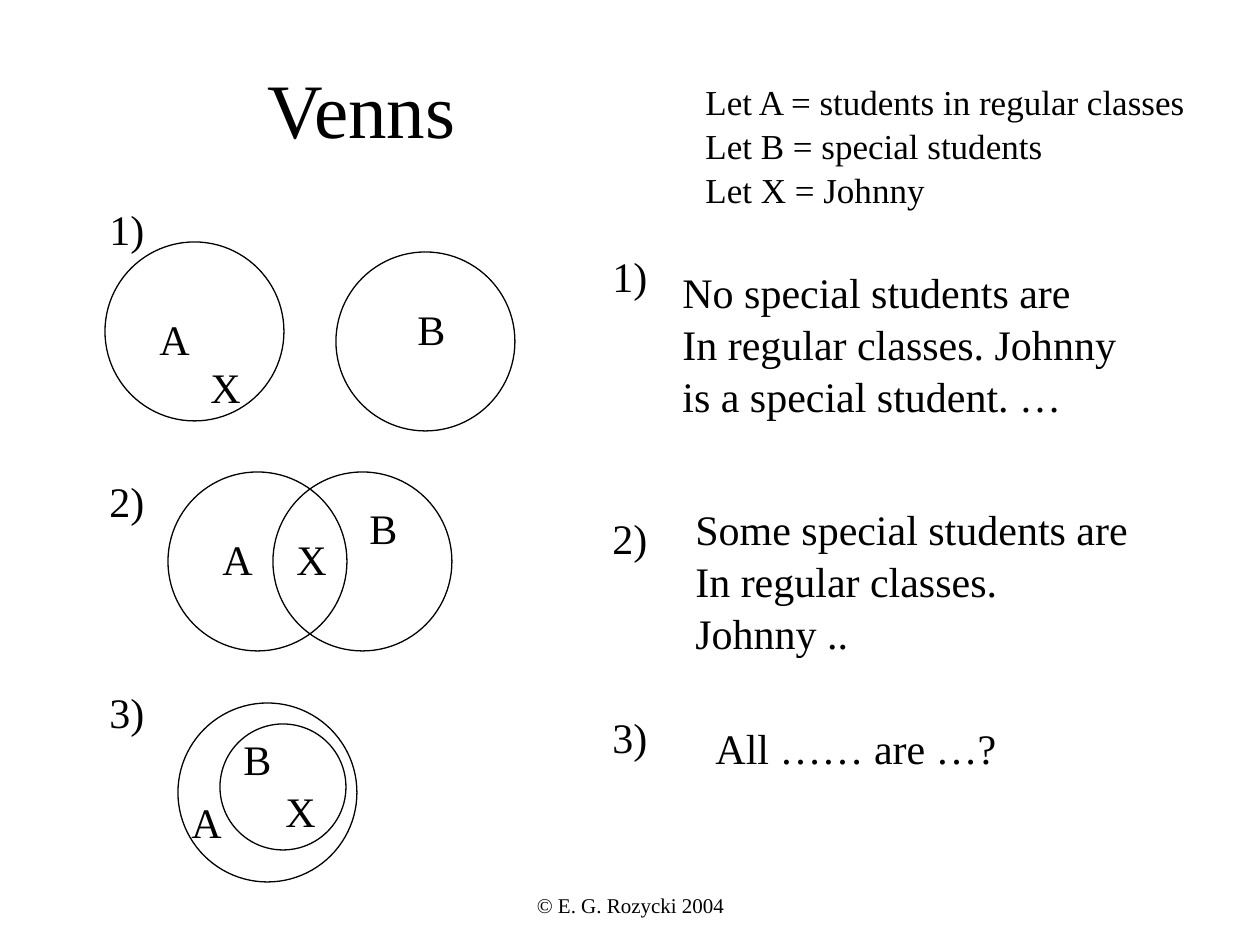
from pptx import Presentation
from pptx.dml.color import RGBColor
from pptx.enum.shapes import MSO_SHAPE
from pptx.enum.text import MSO_ANCHOR, MSO_AUTO_SIZE, PP_ALIGN
from pptx.util import Pt

PX = 914400 / 126
INK = "000000"
FONT = "Times New Roman"
LINE_SPACING = 1.04

CIRCLES = [
    (336, 252, 179), (105, 242, 179),
    (273, 472, 179), (168, 472, 179),
    (220, 724, 126), (178, 703, 179),
]
TITLE = ("Venns", (136, 53, 451, 105), 44, MSO_ANCHOR.MIDDLE)
FOOTER = ("© E. G. Rozycki 2004", (431, 861, 399, 63), 12, MSO_ANCHOR.BOTTOM)
LABELS = {
    "A": [(147, 305), (210, 525), (179, 788)],
    "B": [(405, 295), (357, 494), (231, 725)],
    "X": [(198, 353), (284, 525), (273, 777)],
    "1)": [(97, 195), (600, 242)],
    "2)": [(97, 467), (600, 504)],
    "3)": [(97, 678), (600, 703)],
}
STATEMENTS = [
    (["Let A = students in regular classes", "Let B = special students",
      "Let X = Johnny"], (693, 73, 508, 139), 20),
    (["No special students are",
      "In regular classes. Johnny\nis a special student. …"], (670, 258, 459, 164), 24),
    (["Some special students are", "In regular classes. Johnny .."],
     (683, 495, 490, 113), 24),
    (["All …… are …?"], (703, 714, 306, 63), 24),
]


def px(n):
    return round(n * PX)


def color(h):
    return RGBColor.from_string(h)


def add_circle(s, x, y, d):
    sp = s.shapes.add_shape(MSO_SHAPE.OVAL, px(x), px(y), px(d), px(d))
    sp.shadow.inherit = False
    sp.fill.background()
    sp.line.color.rgb = color(INK)
    sp.line.width = Pt(0.75)


def add_text(s, paragraphs, box, size, anchor=MSO_ANCHOR.TOP, align=PP_ALIGN.LEFT, wrap=False):
    tf = s.shapes.add_textbox(*map(px, box)).text_frame
    tf.word_wrap = wrap
    tf.auto_size = MSO_AUTO_SIZE.NONE if wrap else MSO_AUTO_SIZE.SHAPE_TO_FIT_TEXT
    tf.vertical_anchor = anchor
    for i, text in enumerate(paragraphs):
        p = tf.add_paragraph() if i else tf.paragraphs[0]
        p.alignment = align
        p.line_spacing = LINE_SPACING
        for j, line in enumerate(text.split("\n")):
            if j:
                p.add_line_break()
            r = p.add_run()
            r.text = line
            r.font.name = FONT
            r.font.size = Pt(size)
            r.font.color.rgb = color(INK)


def main():
    """Build the slide of Venn diagrams and their statements."""
    prs = Presentation()
    prs.slide_width, prs.slide_height = px(1260), px(945)
    s = prs.slides.add_slide(prs.slide_layouts[6])
    for text, box, size, anchor in (FOOTER, TITLE):
        add_text(s, [text], box, size, anchor, PP_ALIGN.CENTER, True)
    for circle in CIRCLES:
        add_circle(s, *circle)
    for label, spots in LABELS.items():
        width = 60 if ")" in label else 55
        for x, y in spots:
            add_text(s, [label], (x, y, width, 63), 24)
    for paragraphs, box, size in STATEMENTS:
        add_text(s, paragraphs, box, size)
    prs.save("out.pptx")


if __name__ == "__main__":
    main()
